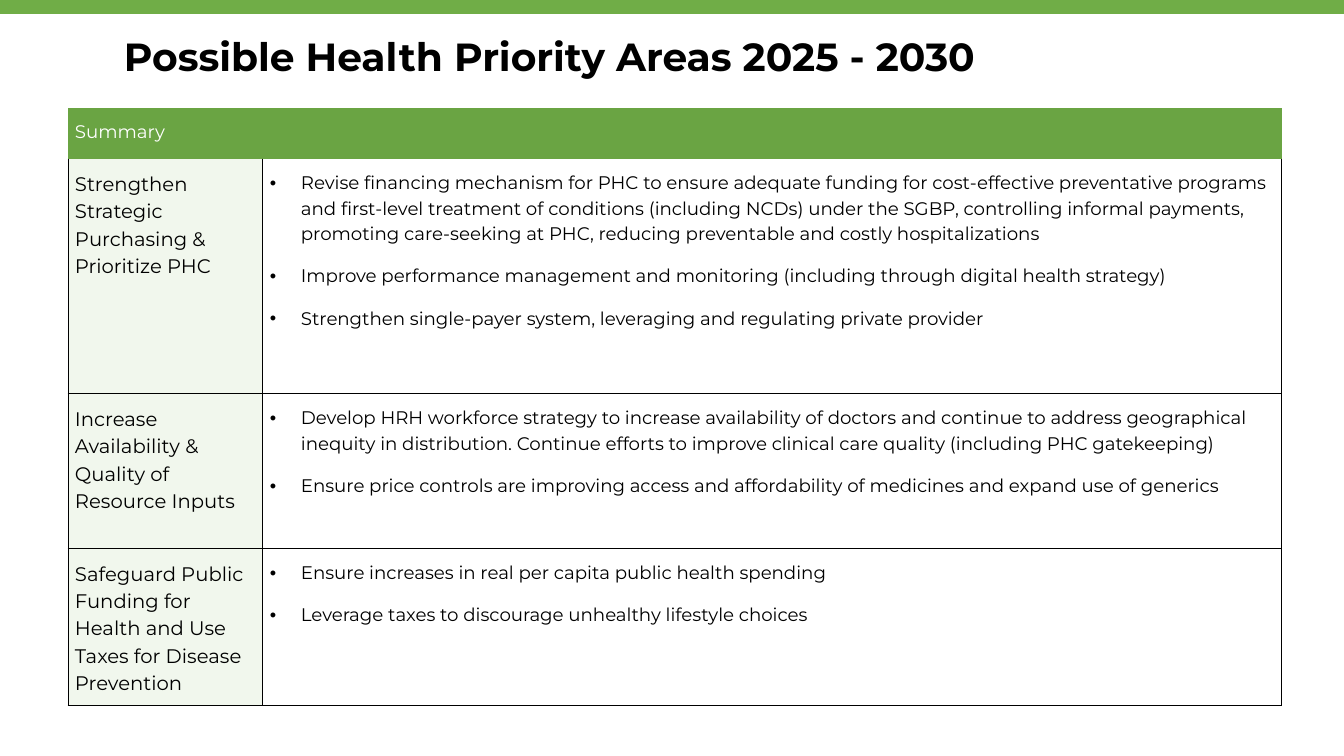
from lxml.etree import SubElement
from pptx import Presentation
from pptx.dml.color import RGBColor
from pptx.enum.shapes import MSO_SHAPE
from pptx.enum.text import MSO_AUTO_SIZE
from pptx.oxml.ns import qn
from pptx.util import Pt

PX = 914400 / 100.8
FONT = "Montserrat"
COLORS = {
    "band": "70AD47",
    "header": "6AA443",
    "label": "F1F7ED",
    "text": "000000",
    "border": "000000",
    "header_text": "FFFFFF",
}
COLUMN_WIDTHS = [195, 1019]
ROW_HEIGHTS = [47, 235, 155, 157]
PRIORITIES = [
    ("Strengthen Strategic Purchasing & Prioritize PHC", [
        "Revise financing mechanism for PHC to ensure adequate funding for cost-effective "
        "preventative programs and first-level treatment of conditions (including NCDs) under "
        "the SGBP, controlling informal payments, promoting care-seeking at PHC, reducing "
        "preventable and costly hospitalizations",
        "Improve performance management and monitoring (including through digital health strategy)",
        "Strengthen single-payer system, leveraging and regulating private provider",
    ]),
    ("Increase Availability & Quality of Resource Inputs", [
        "Develop HRH workforce strategy to increase availability of doctors and continue to "
        "address geographical inequity in distribution. Continue efforts to improve clinical "
        "care quality (including PHC gatekeeping)",
        "Ensure price controls are improving access and affordability of medicines and expand "
        "use of generics",
    ]),
    ("Safeguard Public Funding for Health and Use Taxes for Disease Prevention", [
        "Ensure increases in real per capita public health spending",
        "Leverage taxes to discourage unhealthy lifestyle choices",
    ]),
]


def px(length):
    return round(length * PX)


def color(name):
    return RGBColor.from_string(COLORS[name])


def write(text_frame, lines, size, color_name="text", bold=False, bulleted=False):
    text_frame.text = "\n".join(lines)
    for paragraph in text_frame.paragraphs:
        paragraph.line_spacing = 1.15
        paragraph.space_before = paragraph.space_after = Pt(6)
        if bulleted:
            add_bullet(paragraph)
        for run in paragraph.runs:
            run.font.name = FONT
            run.font.size = Pt(size)
            run.font.bold = bold
            run.font.color.rgb = color(color_name)


def add_bullet(paragraph):
    properties = paragraph._p.get_or_add_pPr()
    properties.set("marL", str(px(31)))
    properties.set("indent", str(-px(31)))
    SubElement(properties, qn("a:buFont"), typeface="Arial")
    SubElement(properties, qn("a:buChar"), char="•")


def set_borders(cell, sides):
    properties = cell._tc.get_or_add_tcPr()
    for position, side in enumerate("LRTB"):
        line = SubElement(properties, qn(f"a:ln{side}"), w=str(Pt(0.75)))
        if side in sides:
            fill = SubElement(line, qn("a:solidFill"))
            SubElement(fill, qn("a:srgbClr"), val=COLORS["border"])
        else:
            SubElement(line, qn("a:noFill"))
        properties.insert(position, line)


def format_cell(cell, fill_name, sides):
    cell.margin_left = cell.margin_right = px(7)
    cell.margin_top = cell.margin_bottom = px(10)
    if fill_name:
        cell.fill.solid()
        cell.fill.fore_color.rgb = color(fill_name)
    else:
        cell.fill.background()
    set_borders(cell, sides)


def add_top_band(slide, left, top, width, height):
    band = slide.shapes.add_shape(
        MSO_SHAPE.RECTANGLE, px(left), px(top), px(width), px(height))
    band.shadow.inherit = False
    band.fill.solid()
    band.fill.fore_color.rgb = color("band")
    band.line.fill.background()


def add_title(slide, left, top, width, height):
    title = slide.shapes.add_textbox(px(left), px(top), px(width), px(height))
    title.text_frame.word_wrap = True
    title.text_frame.auto_size = MSO_AUTO_SIZE.SHAPE_TO_FIT_TEXT
    write(title.text_frame, ["Possible Health Priority Areas 2025 - 2030"], 28, bold=True)


def add_priority_table(slide, left, top):
    table = slide.shapes.add_table(
        len(ROW_HEIGHTS), len(COLUMN_WIDTHS), px(left), px(top),
        px(sum(COLUMN_WIDTHS)), px(sum(ROW_HEIGHTS))).table
    table.first_row = table.horz_banding = False
    for column, width in zip(table.columns, COLUMN_WIDTHS):
        column.width = px(width)
    for row, height in zip(table.rows, ROW_HEIGHTS):
        row.height = px(height)

    for cell in table.rows[0].cells:
        format_cell(cell, "header", "")
    write(table.cell(0, 0).text_frame, ["Summary"], 13, "header_text")

    for row_index, (priority, actions) in enumerate(PRIORITIES, 1):
        sides = "LRB" if row_index == 1 else "LRTB"
        label_cell, action_cell = table.rows[row_index].cells
        format_cell(label_cell, "label", sides)
        format_cell(action_cell, None, sides)
        write(label_cell.text_frame, [priority], 14)
        write(action_cell.text_frame, actions, 13, bulleted=True)


def main():
    presentation = Presentation()
    presentation.slide_width = px(1344)
    presentation.slide_height = px(756)
    slide = presentation.slides.add_slide(presentation.slide_layouts[6])
    add_top_band(slide, 0, 0, 1344, 14)
    add_priority_table(slide, 68, 108)
    add_title(slide, 114, 20, 1075, 82)
    presentation.save("out.pptx")


if __name__ == "__main__":
    main()
